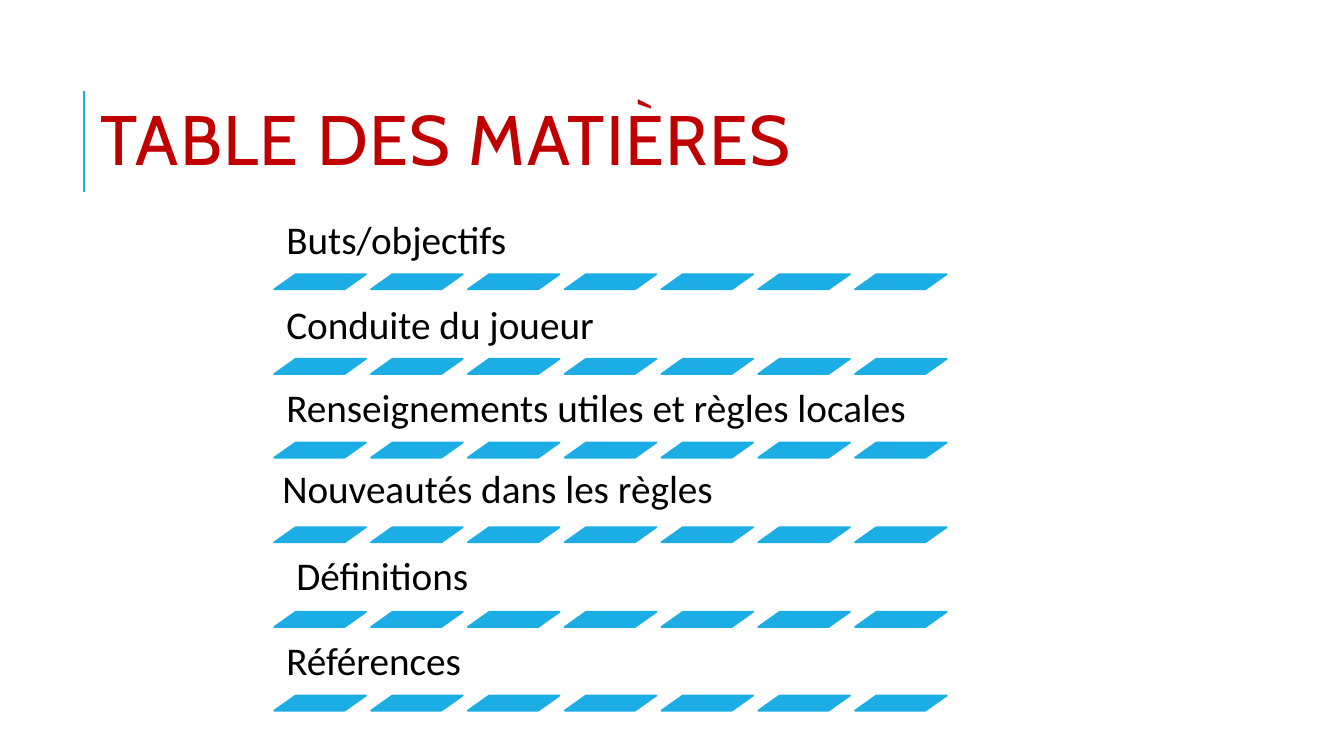
from lxml.etree import SubElement
from pptx import Presentation
from pptx.dml.color import RGBColor
from pptx.enum.shapes import MSO_CONNECTOR, MSO_SHAPE
from pptx.enum.text import MSO_ANCHOR, MSO_AUTO_SIZE, PP_ALIGN
from pptx.oxml.ns import qn
from pptx.util import Emu, Pt

BLUE = "1CADE4"
TOPICS = [
    ("Buts/objectifs", 0, 0),
    ("Conduite du joueur", 0, 0),
    ("Renseignements utiles et règles locales", 0, 0),
    ("Nouveautés dans les règles", -4, -4),
    ("Définitions", 10, -2),
    ("Références", 0, 0),
]


def px(*sizes):
    return [Emu(size * 9144) for size in sizes]


def paint(target, color):
    target.rgb = RGBColor.from_string(color)


def write(frame, text, font, size, color, ratio):
    frame.text = text
    frame.word_wrap = True
    frame.auto_size = MSO_AUTO_SIZE.NONE
    line = frame.paragraphs[0]
    line.alignment = PP_ALIGN.LEFT
    line.line_spacing = ratio
    run = line.runs[0]
    run.font.name = font
    run.font.size = Pt(size)
    paint(run.font.color, color)
    return run


def add_title(slide, x, y, w, h):
    rule = slide.shapes.add_connector(
        MSO_CONNECTOR.STRAIGHT, *px(x - 7, y + 101, x - 7, y + 1))
    paint(rule.line.color, BLUE)
    rule.line.width = Pt(1.5)
    SubElement(rule._element.spPr, qn("a:effectLst"))
    title = slide.shapes.title
    title.left, title.top, title.width, title.height = px(x, y, w, h)
    frame = title.text_frame
    frame.vertical_anchor = MSO_ANCHOR.MIDDLE
    run = write(frame, "TABLE DES MATIÈRES", "Cabin", 50, "C00000", 0.8)
    run._r.get_or_add_rPr().set("spc", "100")


def add_label(slide, text, x, y, w, h):
    frame = slide.shapes.add_textbox(*px(x, y, w, h)).text_frame
    frame.vertical_anchor = MSO_ANCHOR.BOTTOM
    (frame.margin_left, frame.margin_top,
     frame.margin_right, frame.margin_bottom) = px(12, 12, 12, 12)
    write(frame, text, "Calibri", 28, "000000", 0.9)


def add_bars(slide, x, y):
    for col in range(7):
        bar = slide.shapes.add_shape(
            MSO_SHAPE.PARALLELOGRAM, *px(x + 96 * col, y, 91, 15))
        bar.adjustments[0] = 1.41
        bar.shadow.inherit = False
        bar.fill.solid()
        paint(bar.fill.fore_color, BLUE)
        paint(bar.line.color, BLUE)
        bar.line.width = Pt(1.25)


def add_topics(slide, x, y, w, h):
    pitch = h / len(TOPICS)
    for row, (text, dx, dy) in enumerate(TOPICS):
        top = y + round(row * pitch)
        add_label(slide, text, x + dx, top + dy, w, 62)
        add_bars(slide, x, top + 61)


def main():
    deck = Presentation()
    deck.slide_width, deck.slide_height = px(1333, 750)
    slide = deck.slides.add_slide(deck.slide_layouts[5])
    add_title(slide, 90, 89, 1063, 110)
    add_topics(slide, 272, 211, 680, 502)
    deck.save("out.pptx")


if __name__ == "__main__":
    main()
